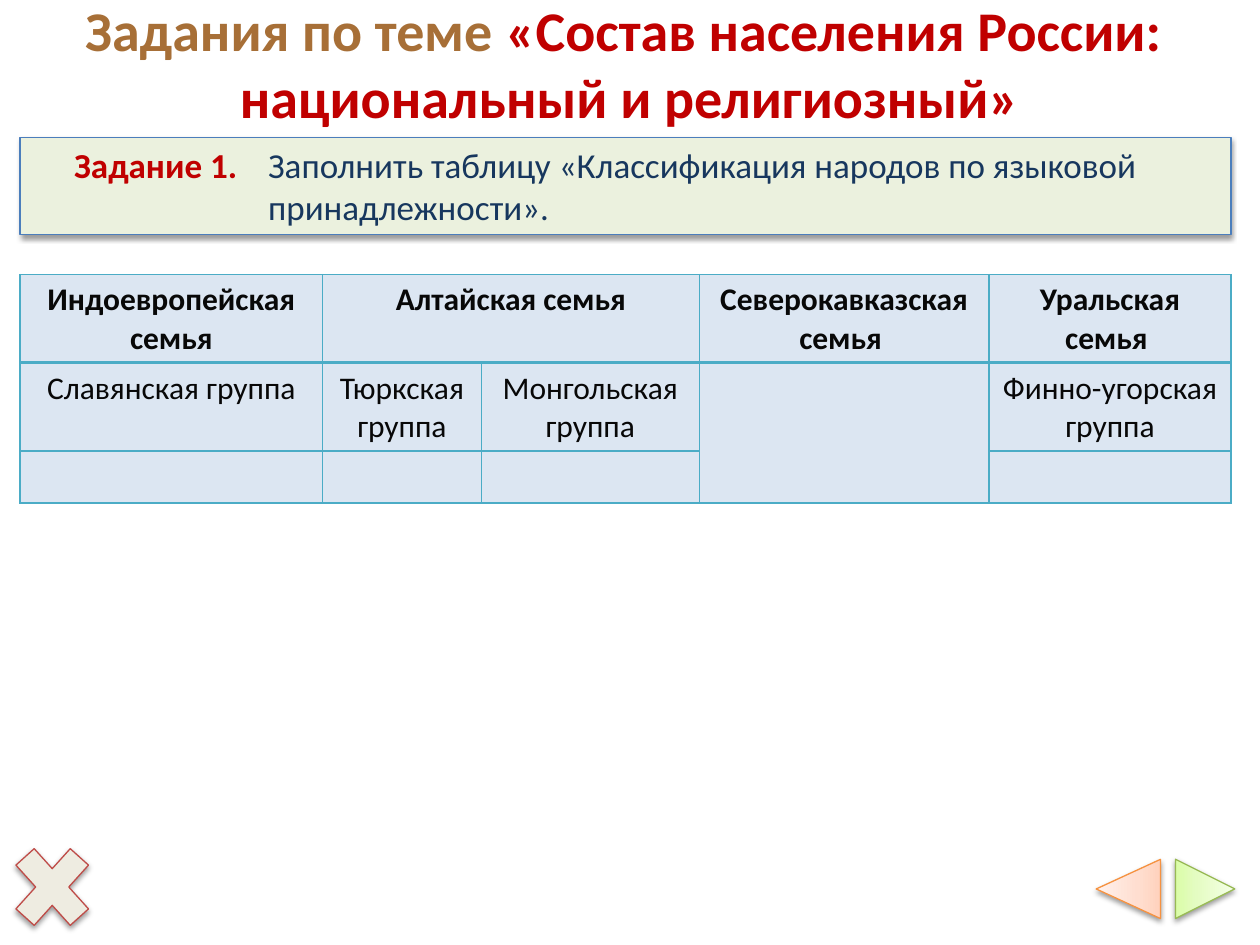
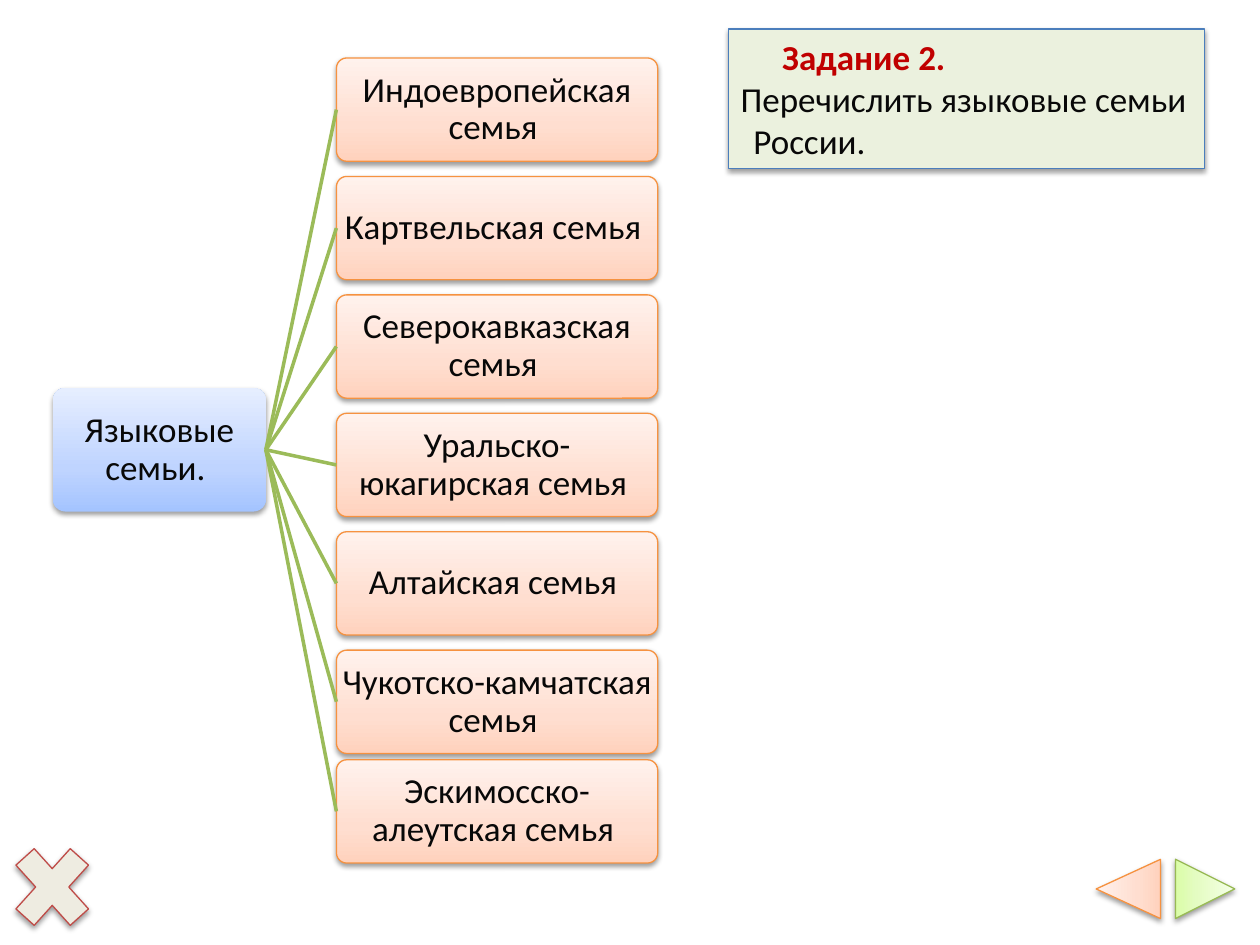
"""Build two task slides about the peoples and language families of Russia."""
from pptx import Presentation
from pptx.dml.color import RGBColor
from pptx.enum.shapes import MSO_CONNECTOR, MSO_SHAPE
from pptx.enum.text import MSO_ANCHOR, PP_ALIGN
from pptx.oxml import parse_xml
from pptx.util import Inches, Pt

RECT, ROUNDED = MSO_SHAPE.RECTANGLE, MSO_SHAPE.ROUNDED_RECTANGLE
TRIANGLE, CROSS = MSO_SHAPE.ISOSCELES_TRIANGLE, MSO_SHAPE.MATH_MULTIPLY
STRAIGHT = MSO_CONNECTOR.STRAIGHT
LEFT, CENTER = PP_ALIGN.LEFT, PP_ALIGN.CENTER
TOP, MIDDLE = MSO_ANCHOR.TOP, MSO_ANCHOR.MIDDLE

FONT = "Calibri"
NS = 'xmlns:a="http://schemas.openxmlformats.org/drawingml/2006/main"'
COLORS = {
    "brown": "A76F37", "red": "C00000", "navy": "17375E", "ink": "080808",
    "task": "EBF1DE", "task_line": "4B7EBC",
    "cell": "DCE6F2", "border": "4BACC6", "branch": "9BBB59",
    "close": "EEECE1", "close_line": "BF4C48",
    "next_line": "98B955", "peach_line": "F69240",
}
GRADIENTS = {
    "green": ("DAFDA7", "E4FCC2", "F5FFE7"),
    "peach": ("FFD2BD", "FFDED0", "FFF2ED"),
    "blue": ("A4C4FF", "BFD4FF", "E6EEFF"),
}

TITLE = [
    [("Задания по теме ", "brown"), ("«Состав населения России: ", "red")],
    [("национальный и религиозный»", "red")],
]
TASK_1 = "Заполнить таблицу «Классификация народов по языковой принадлежности»."
TASK_2 = "Перечислить языковые семьи России."
PEOPLES = [
    ["Индоевропейская семья", "Алтайская семья", "", "Северокавказская семья ",
     "Уральская семья "],
    ["Славянская группа", "Тюркская группа", "Монгольская группа", "",
     "Финно-угорская группа"],
    [""] * 5,
]
MERGES = [((0, 1), (0, 2)), ((1, 3), (2, 3))]
COLUMN_WIDTHS = [2.4, 1.26, 1.73, 2.3, 1.92]
ROW_HEIGHTS = [0.7, 0.7, 0.41]
ROOT = "Языковые семьи. "
FAMILIES = [
    "Индоевропейская семья ", "Картвельская семья ", "Северокавказская семья ",
    "Уральско-юкагирская семья ", "Алтайская семья ",
    "Чукотско-камчатская семья ", "Эскимосско-алеутская семья ",
]
FAMILY_TOP, FAMILY_PITCH, LAST_FAMILY_TOP = 0.46, 0.94, 6.03


def rgb(name):
    return RGBColor.from_string(COLORS[name])


def add_runs(paragraph, runs, size, bold=False):
    for text, color in runs:
        run = paragraph.add_run()
        run.text = text
        run.font.name, run.font.size, run.font.bold = FONT, Pt(size), bold
        run.font.color.rgb = rgb(color)


def add_figure(slide, kind, box, fill, line=None, rotation=0):
    figure = slide.shapes.add_shape(kind, *map(Inches, box))
    figure.rotation = rotation
    properties = figure._element.spPr
    if fill in GRADIENTS:
        stops = "".join(
            f'<a:gs pos="{pos}"><a:srgbClr val="{color}"/></a:gs>'
            for pos, color in zip((0, 35000, 100000), GRADIENTS[fill]))
        properties.append(parse_xml(
            f'<a:gradFill {NS} rotWithShape="1"><a:gsLst>{stops}</a:gsLst>'
            '<a:lin ang="16200000" scaled="1"/></a:gradFill>'))
    else:
        figure.fill.solid()
        figure.fill.fore_color.rgb = rgb(fill)
    if line:
        figure.line.color.rgb = rgb(line)
        figure.line.width = Pt(0.75)
    else:
        figure.line.fill.background()
    properties.append(parse_xml(
        f'<a:effectLst {NS}><a:outerShdw blurRad="{Pt(3.1)}" dist="{Pt(1.6)}" '
        'dir="5400000" rotWithShape="0"><a:srgbClr val="000000">'
        '<a:alpha val="38000"/></a:srgbClr></a:outerShdw></a:effectLst>'))
    return figure


def add_navigation(slide):
    add_figure(slide, TRIANGLE, (9.33, 6.82, 0.47, 0.47), "green", "next_line", 90)
    add_figure(slide, TRIANGLE, (8.72, 6.8, 0.47, 0.51), "peach", "peach_line", 270)
    close = add_figure(slide, CROSS, (0, 6.58, 0.83, 0.92), "close", "close_line")
    close.adjustments[0] = 0.235


def set_indent(paragraph, margin, first_line):
    properties = paragraph._p.get_or_add_pPr()
    properties.set("marL", str(Inches(margin)))
    properties.set("indent", str(Inches(first_line)))
    paragraph.alignment = LEFT


def add_task(slide, box, label):
    frame = add_figure(slide, RECT, box, "task", "task_line").text_frame
    frame.word_wrap = True
    frame.vertical_anchor = TOP
    heading = frame.paragraphs[0]
    set_indent(heading, 1.87, -1.54)
    add_runs(heading, [(label, "red")], 20, bold=True)
    return frame


def add_peoples_table(slide):
    table = slide.shapes.add_table(
        len(PEOPLES), len(COLUMN_WIDTHS), Inches(0.16), Inches(2.18),
        Inches(sum(COLUMN_WIDTHS)), Inches(sum(ROW_HEIGHTS))).table
    for column, width in zip(table.columns, COLUMN_WIDTHS):
        column.width = Inches(width)
    for row, height in zip(table.rows, ROW_HEIGHTS):
        row.height = Inches(height)
    for r, texts in enumerate(PEOPLES):
        widths = {"L": 1, "R": 1, "T": 2 if r == 1 else 1, "B": 2 if r == 0 else 1}
        for c, text in enumerate(texts):
            cell = table.cell(r, c)
            properties = cell._tc.get_or_add_tcPr()
            for side, width in widths.items():
                properties.append(parse_xml(
                    f'<a:ln{side} {NS} w="{Pt(width)}"><a:solidFill><a:srgbClr '
                    f'val="{COLORS["border"]}"/></a:solidFill></a:ln{side}>'))
            cell.fill.solid()
            cell.fill.fore_color.rgb = rgb("cell")
            paragraph = cell.text_frame.paragraphs[0]
            paragraph.alignment = CENTER
            if text:
                add_runs(paragraph, [(text, "ink")], 18, bold=r == 0)
    for start, end in MERGES:
        table.cell(*start).merge(table.cell(*end))


def add_node(slide, box, text, fill, line=None):
    node = add_figure(slide, ROUNDED, box, fill, line)
    node.adjustments[0] = 0.1
    frame = node.text_frame
    frame.word_wrap = True
    frame.vertical_anchor = MIDDLE
    frame.margin_left = frame.margin_right = Inches(0.01)
    frame.margin_top = frame.margin_bottom = Inches(0.01)
    paragraph = frame.paragraphs[0]
    paragraph.alignment = CENTER
    paragraph.line_spacing = 0.9
    add_runs(paragraph, [(text, "ink")], 20)
    return node


def add_family_tree(slide):
    root = add_node(slide, (0.42, 3.08, 1.69, 0.98), ROOT, "blue")
    tops = [FAMILY_TOP + FAMILY_PITCH * i for i in range(len(FAMILIES) - 1)]
    for family, top in zip(FAMILIES, tops + [LAST_FAMILY_TOP]):
        node = add_node(slide, (2.67, top, 2.55, 0.82), family, "peach", "peach_line")
        branch = slide.shapes.add_connector(STRAIGHT, 0, 0, 0, 0)
        branch.begin_connect(root, 3)
        branch.end_connect(node, 1)
        branch.line.color.rgb = rgb("branch")
        branch.line.width = Pt(2)
        branch._element.spPr.append(parse_xml(f"<a:effectLst {NS}/>"))


def add_title(slide):
    frame = slide.shapes.add_textbox(0, 0, Inches(10), Inches(0.99)).text_frame
    frame.word_wrap = True
    frame.vertical_anchor = MIDDLE
    for i, runs in enumerate(TITLE):
        paragraph = frame.add_paragraph() if i else frame.paragraphs[0]
        paragraph.alignment = CENTER
        add_runs(paragraph, runs, 32, bold=True)


def main():
    deck = Presentation()
    deck.slide_width, deck.slide_height = Inches(10), Inches(7.5)
    table_slide, tree_slide = (
        deck.slides.add_slide(deck.slide_layouts[6]) for _ in range(2))

    add_navigation(table_slide)
    add_title(table_slide)
    task = add_task(table_slide, (0.16, 1.09, 9.61, 0.77), "Задание 1.\t")
    add_runs(task.paragraphs[0], [(TASK_1, "navy")], 20)
    add_peoples_table(table_slide)

    add_navigation(tree_slide)
    add_family_tree(tree_slide)
    task = add_task(tree_slide, (5.78, 0.23, 3.78, 1.11), "Задание 2.")
    question = task.add_paragraph()
    set_indent(question, 0.1, -0.1)
    add_runs(question, [(TASK_2, "ink")], 20)

    deck.save("out.pptx")


if __name__ == "__main__":
    main()
